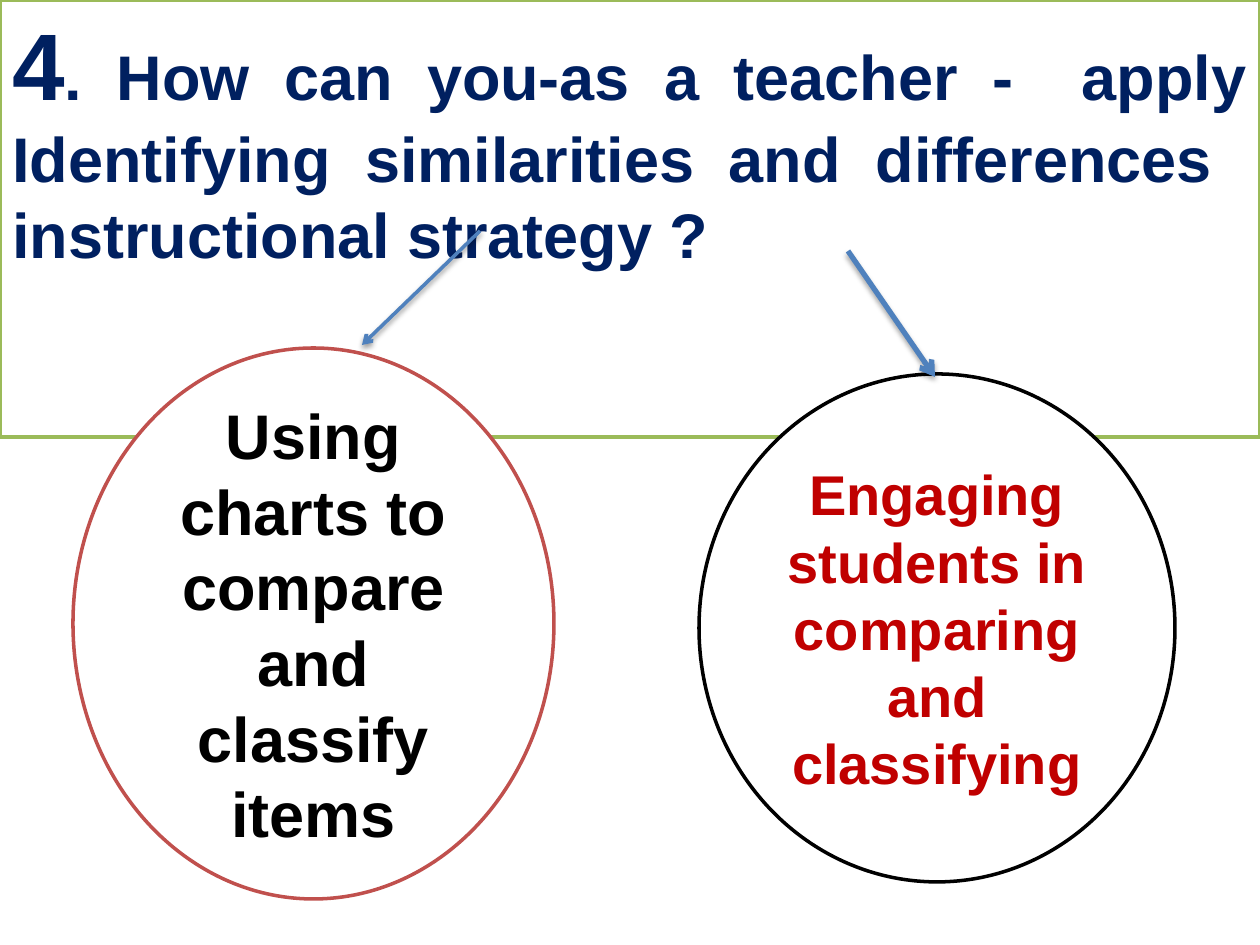
from lxml.etree import SubElement
from pptx import Presentation
from pptx.dml.color import RGBColor
from pptx.enum.shapes import MSO_CONNECTOR, MSO_SHAPE
from pptx.enum.text import MSO_ANCHOR, PP_ALIGN
from pptx.oxml.ns import qn
from pptx.util import Emu, Pt

PX = 914400 // 126
COLORS = {
    "white": "FFFFFF",
    "black": "000000",
    "navy": "002060",
    "green": "9BBB59",
    "brick": "C0504D",
    "red": "C00000",
    "blue": "4F81BD",
}


def px(value):
    return Emu(value * PX)


def color(name):
    return RGBColor.from_string(COLORS[name])


def add_text_shape(slide, kind, box, line_color, runs, text_color, align, anchor):
    """Add an outlined white shape holding one paragraph of (text, size) runs."""
    shape = slide.shapes.add_shape(kind, *(px(value) for value in box))
    shape.shadow.inherit = False
    shape.fill.solid()
    shape.fill.fore_color.rgb = color("white")
    shape.line.color.rgb = color(line_color)
    shape.line.width = Pt(2)
    frame = shape.text_frame
    frame.word_wrap = True
    frame.vertical_anchor = anchor
    paragraph = frame.paragraphs[0]
    paragraph.alignment = align
    for text, size in runs:
        run = paragraph.add_run()
        run.text = text
        run.font.name = "Arial"
        run.font.size = Pt(size)
        run.font.bold = True
        run.font.color.rgb = color(text_color)


def add_question(slide, box):
    runs = [
        ("4", 54),
        (". How can you-as a teacher -  apply Identifying similarities and "
         "differences  instructional strategy ?", 36),
    ]
    add_text_shape(slide, MSO_SHAPE.RECTANGLE, box, "green", runs, "navy",
                   PP_ALIGN.JUSTIFY, MSO_ANCHOR.TOP)


def add_answer(slide, box, line_color, text, size, text_color):
    add_text_shape(slide, MSO_SHAPE.OVAL, box, line_color, [(text, size)],
                   text_color, PP_ALIGN.CENTER, MSO_ANCHOR.MIDDLE)


def add_arrow(slide, start, end, width, distance, opacity):
    """Add an arrow with a soft shadow straight below it."""
    points = (px(value) for value in (*start, *end))
    arrow = slide.shapes.add_connector(MSO_CONNECTOR.STRAIGHT, *points)
    arrow.line.color.rgb = color("blue")
    arrow.line.width = Pt(width)
    SubElement(arrow.line._get_or_add_ln(), qn("a:tailEnd"), type="arrow")
    effects = SubElement(arrow._element.spPr, qn("a:effectLst"))
    shadow = SubElement(effects, qn("a:outerShdw"), blurRad=str(Pt(3.1)),
                        dist=str(Pt(distance)), dir="5400000", rotWithShape="0")
    shade = SubElement(shadow, qn("a:srgbClr"), val=COLORS["black"])
    SubElement(shade, qn("a:alpha"), val=str(opacity * 1000))


def main():
    presentation = Presentation()
    presentation.slide_width = px(1260)
    presentation.slide_height = px(945)
    slide = presentation.slides.add_slide(presentation.slide_layouts[6])

    # Question across the top
    add_question(slide, (0, 0, 1260, 437))

    # Two answers
    add_answer(slide, (73, 348, 481, 551), "brick",
               "Using charts to compare and classify items", 36, "black")
    add_answer(slide, (699, 374, 476, 508), "black",
               "Engaging students in comparing and classifying", 32, "red")

    # Arrows from the question to the answers
    add_arrow(slide, (848, 251), (935, 377), 3, 1.8, 35)
    add_arrow(slide, (480, 231), (362, 345), 2, 1.6, 38)

    presentation.save("out.pptx")


if __name__ == "__main__":
    main()
